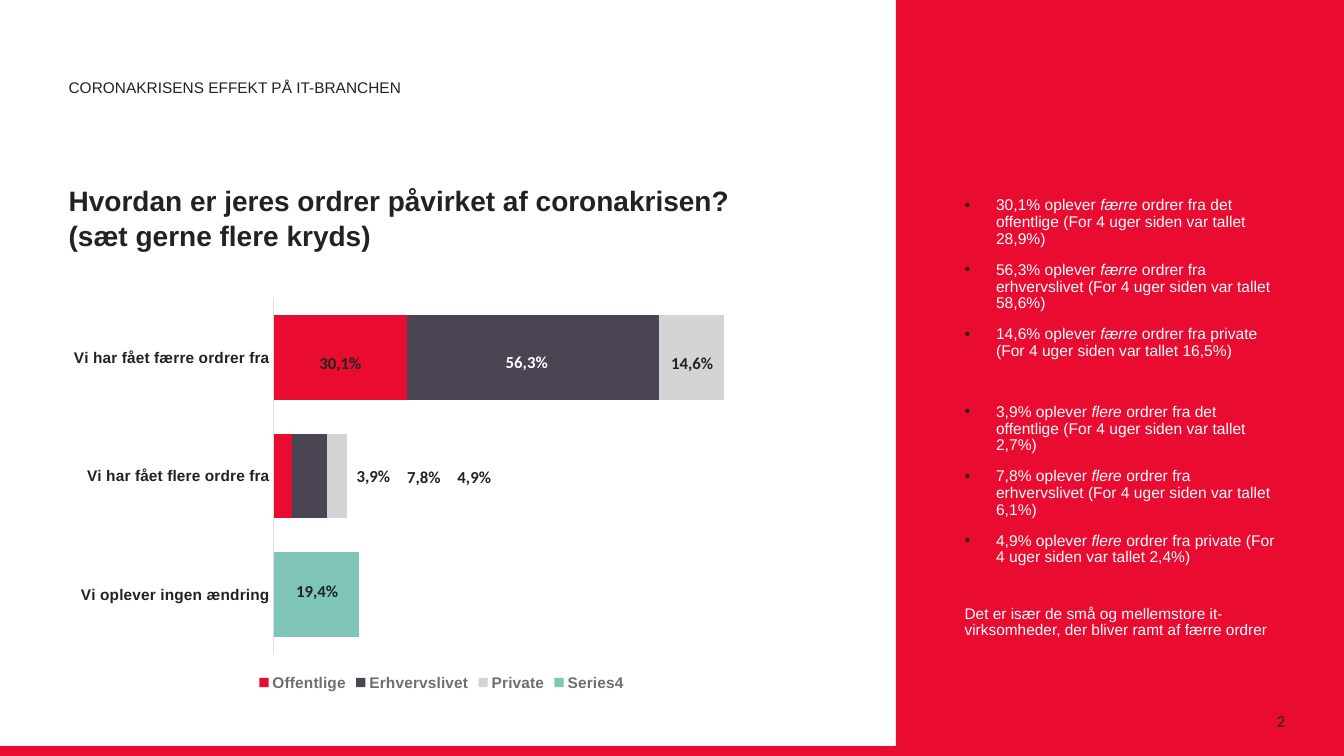
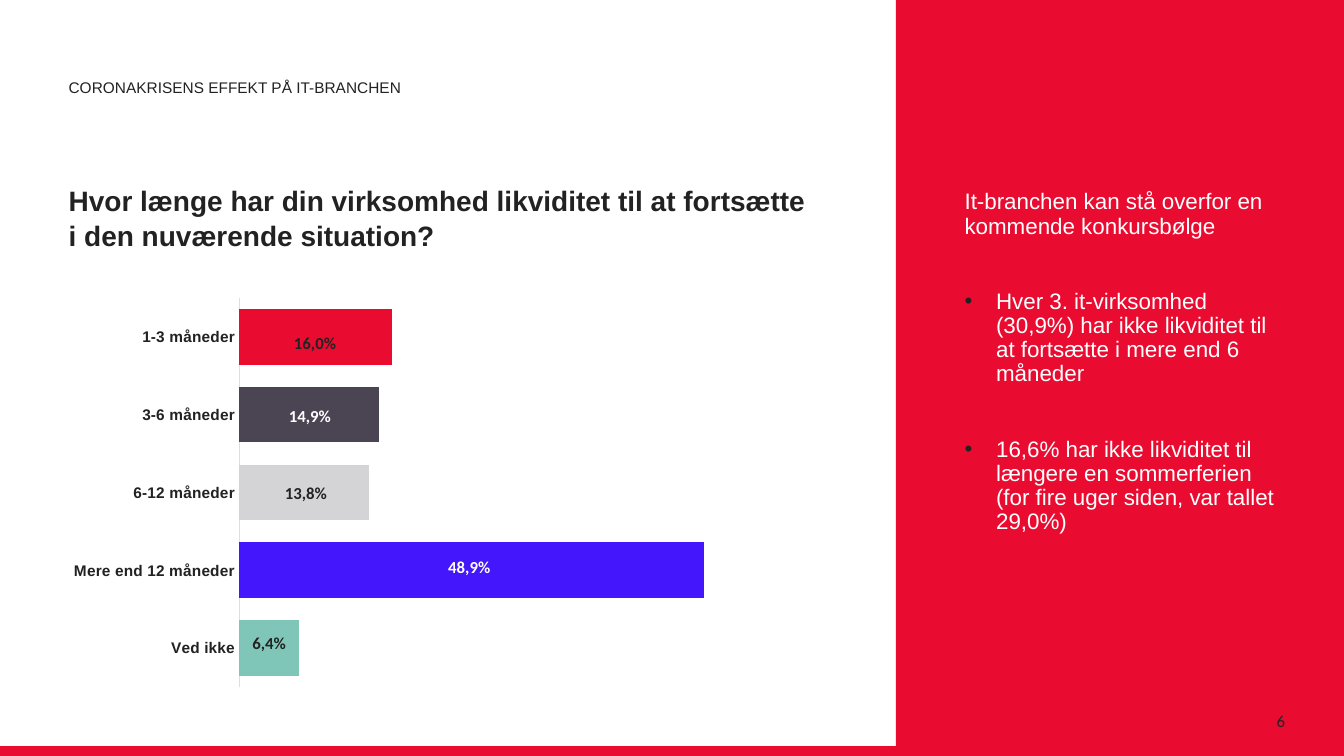
from dataclasses import dataclass

from pptx import Presentation
from pptx import util as u
from pptx.chart.data import CategoryChartData
from pptx.dml.color import RGBColor
from pptx.enum import chart as charts
from pptx.enum import shapes, text
from pptx.oxml import ns, parse_xml


@dataclass(frozen=True)
class Theme:
    red: str = "E90C30"
    plum: str = "4A4453"
    silver: str = "D4D3D6"
    mint: str = "80C6B8"
    violet: str = "4316FB"
    ink: str = "222222"
    white: str = "FFFFFF"
    legend: str = "6F6F6F"
    axis: str = "DEDEDE"
    heading_font: str = "Arial"
    figure_font: str = "Calibri"
    title_size: float = 20
    lead_size: float = 16
    label_size: float = 12
    list_size: float = 11.1
    small_size: float = 11
    chart_size: float = 10


THEME = Theme()


@dataclass(frozen=True)
class Box:
    """A rectangle in points."""
    left: float
    top: float
    width: float
    height: float


@dataclass(frozen=True)
class Line:
    """A paragraph; words between asterisks are italic."""
    content: str
    before: float = 10
    bullet: bool = True


@dataclass(frozen=True)
class Series:
    name: str
    values: tuple[int | None, ...]
    color: str
    point_colors: tuple[str, ...] = ()


@dataclass(frozen=True)
class Label:
    content: str
    left: float
    top: float
    color: str = THEME.ink


@dataclass(frozen=True)
class Survey:
    number: int
    question: str
    categories: tuple[str, ...]
    series: tuple[Series, ...]
    plot: Box
    maximum: float
    labels: tuple[Label, ...]
    label_align: text.PP_ALIGN
    findings: tuple[Line, ...]
    findings_top: float
    findings_size: float
    note: str = ""


WIDTH, HEIGHT = 960, 540
PANEL = Box(640, 0, 320, HEIGHT)
BOTTOM_BAND = Box(0, 533, WIDTH, 7)
KICKER = Box(41.8, 51.1, 547.2, 21.6)
TITLE = Box(41.8, 103.7, 547.2, 79.9)
CHART = Box(41.8, 206.6, 547.2, 290.2)
NOTE = Box(681.8, 429.1, 236.2, 90.7)
PAGE_NUMBER = Box(702, 500.4, 216, 28.8)
BULLET_INDENT = 22.5

SURVEYS = (
    Survey(
        2,
        "Hvordan er jeres ordrer påvirket af coronakrisen?\n(sæt gerne flere kryds)",
        ("Vi oplever ingen ændring", "Vi har fået flere ordre fra", "Vi har fået færre ordrer fra"),
        (
            Series("Offentlige", (None, 7, 53), THEME.red),
            Series("Erhvervslivet", (None, 14, 100), THEME.plum),
            Series("Private", (None, 8, 26), THEME.silver),
            Series("Series4", (34, None, None), THEME.mint),
        ),
        Box(195.7, 212.9, 359.5, 254.3), 200,
        (
            Label("30,1%", 221, 248.4),
            Label("56,3%", 354.2, 247.7, THEME.white),
            Label("14,6%", 472.3, 248.4),
            Label("3,9%", 247.7, 329),
            Label("7,8%", 283.7, 329.8),
            Label("4,9%", 319.7, 329.8),
            Label("19,4%", 204.5, 411.1),
        ),
        text.PP_ALIGN.LEFT,
        (
            Line("30,1% oplever *færre* ordrer fra det offentlige (For 4 uger siden var tallet 28,9%)", 0),
            Line("56,3% oplever *færre* ordrer fra erhvervslivet (For 4 uger siden var tallet 58,6%)"),
            Line("14,6% oplever *færre* ordrer fra private (For 4 uger siden var tallet 16,5%)"),
            Line("3,9% oplever *flere* ordrer fra det offentlige (For 4 uger siden var tallet 2,7%)", 31.5),
            Line("7,8% oplever *flere* ordrer fra erhvervslivet (For 4 uger siden var tallet 6,1%)"),
            Line("4,9% oplever *flere* ordrer fra private (For 4 uger siden var tallet 2,4%)"),
        ),
        137.5, THEME.list_size,
        "Det er især de små og mellemstore it-virksomheder, der bliver ramt af færre ordrer",
    ),
    Survey(
        6,
        "Hvor længe har din virksomhed likviditet til at fortsætte i den nuværende situation?",
        ("Ved ikke", "Mere end 12 måneder", "6-12 måneder", "3-6 måneder", "1-3 måneder"),
        (
            Series("Series 1", (13, 100, 28, 30, 33), THEME.red,
                   (THEME.mint, THEME.violet, THEME.silver, THEME.plum, THEME.red)),
        ),
        Box(170.7, 212.9, 398.6, 277.9), 120,
        (
            Label("14,9%", 198.7, 286.6, THEME.white),
            Label("16,0%", 202.3, 234),
            Label("13,8%", 195.8, 341.3),
            Label("48,9%", 312.5, 393.8, THEME.white),
            Label("6,4%", 172.8, 448.6),
        ),
        text.PP_ALIGN.CENTER,
        (
            Line("It-branchen kan stå overfor en kommende konkursbølge", 0, False),
            Line("Hver 3. it-virksomhed (30,9%) har ikke likviditet til at fortsætte i mere end 6 måneder", 36.6),
            Line("16,6% har ikke likviditet til længere en sommerferien "
                 "(for fire uger siden, var tallet 29,0%)", 36.6),
        ),
        132.5, THEME.lead_size,
    ),
)


def in_points(box: Box) -> tuple:
    return u.Pt(box.left), u.Pt(box.top), u.Pt(box.width), u.Pt(box.height)


def place(shape, box: Box) -> None:
    shape.left, shape.top, shape.width, shape.height = in_points(box)


def paint(fill, color: str) -> None:
    fill.solid()
    fill.fore_color.rgb = RGBColor.from_string(color)


def style(font, size: float, color: str, name: str = THEME.heading_font,
          bold: bool = False, italic: bool = False) -> None:
    font.name, font.size, font.bold, font.italic = name, u.Pt(size), bold, italic
    font.color.rgb = RGBColor.from_string(color)


def set_bullet(paragraph, bullet: bool) -> None:
    properties = paragraph._p.get_or_add_pPr()
    indent = u.Pt(BULLET_INDENT) if bullet else 0
    properties.set("marL", str(indent))
    properties.set("indent", str(-indent))
    marks = (f'<a:buClr {{}}><a:srgbClr val="{THEME.ink}"/></a:buClr>',
             '<a:buFont {} typeface="Arial"/>', '<a:buChar {} char="•"/>')
    for mark in marks if bullet else ("<a:buNone {}/>",):
        properties.append(parse_xml(mark.format(ns.nsdecls("a"))))


def write(shape, lines: str | tuple[Line, ...], *, size: float, color: str = THEME.ink,
          name: str = THEME.heading_font, bold: bool = False, align=text.PP_ALIGN.LEFT,
          anchor=text.MSO_ANCHOR.TOP, spacing: float | None = None, wrap: bool = True) -> None:
    frame = shape.text_frame
    frame.word_wrap = wrap
    frame.auto_size = text.MSO_AUTO_SIZE.NONE if wrap else text.MSO_AUTO_SIZE.SHAPE_TO_FIT_TEXT
    frame.vertical_anchor = anchor
    if isinstance(lines, str):
        lines = (Line(lines, 0, False),)
    for index, line in enumerate(lines):
        paragraph = frame.add_paragraph() if index else frame.paragraphs[0]
        set_bullet(paragraph, line.bullet)
        paragraph.alignment = align
        paragraph.space_before = u.Pt(line.before)
        if spacing:
            paragraph.line_spacing = spacing
        for part_index, part in enumerate(line.content.split("*")):
            for row_index, row in enumerate(part.split("\n")):
                if row_index:
                    paragraph.add_line_break()
                run = paragraph.add_run()
                run.text = row
                style(run.font, size, color, name, bold, italic=part_index % 2 == 1)


def add_bands(layout, slide) -> None:
    """Put the red areas on the layout, behind its placeholders."""
    for box in (PANEL, BOTTOM_BAND):
        band = slide.shapes.add_shape(shapes.MSO_SHAPE.RECTANGLE, *in_points(box))
        band.shadow.inherit = False
        paint(band.fill, THEME.red)
        band.line.fill.background()
        layout.shapes.element.insert(2, band.element)


def fix_plot_area(chart, plot: Box) -> None:
    """Pin the inner plot area to a rectangle on the slide."""
    area = chart.element.find(".//" + ns.qn("c:plotArea"))
    for layout in area.findall(ns.qn("c:layout")):
        area.remove(layout)
    fractions = {
        "x": (plot.left - CHART.left) / CHART.width,
        "y": (plot.top - CHART.top) / CHART.height,
        "w": plot.width / CHART.width,
        "h": plot.height / CHART.height,
    }
    sizes = "".join(f'<c:{key} val="{value:.4f}"/>' for key, value in fractions.items())
    area.insert(0, parse_xml(
        f'<c:layout {ns.nsdecls("c")}><c:manualLayout><c:layoutTarget val="inner"/>'
        f'<c:xMode val="edge"/><c:yMode val="edge"/>{sizes}</c:manualLayout></c:layout>'))


def add_bar_chart(slide, survey: Survey) -> None:
    stacked = len(survey.series) > 1
    data = CategoryChartData()
    data.categories = survey.categories
    for series in survey.series:
        data.add_series(series.name, series.values)
    kind = charts.XL_CHART_TYPE.BAR_STACKED if stacked else charts.XL_CHART_TYPE.BAR_CLUSTERED
    chart = slide.shapes.add_chart(kind, *in_points(CHART), data).chart
    style(chart.font, THEME.chart_size, THEME.ink, THEME.figure_font)
    chart.has_title = False
    chart.has_legend = stacked
    if stacked:
        chart.legend.position = charts.XL_LEGEND_POSITION.BOTTOM
        chart.legend.include_in_layout = False
        style(chart.legend.font, THEME.small_size, THEME.legend, bold=True)

    plot = chart.plots[0]
    plot.gap_width = 40
    plot.vary_by_categories = False
    if stacked:
        plot.overlap = 100
    for drawn, series in zip(plot.series, survey.series):
        drawn.invert_if_negative = False
        paint(drawn.format.fill, series.color)
        for index, color in enumerate(series.point_colors):
            paint(drawn.points[index].format.fill, color)

    categories, values = chart.category_axis, chart.value_axis
    categories.major_tick_mark = charts.XL_TICK_MARK.NONE
    categories.format.line.width = u.Pt(0.75)
    paint(categories.format.line.fill, THEME.axis)
    style(categories.tick_labels.font, THEME.small_size, THEME.ink, bold=True)
    values.minimum_scale, values.maximum_scale = 0, survey.maximum
    values.has_major_gridlines = False
    values.visible = False
    fix_plot_area(chart, survey.plot)


def add_survey(slide, survey: Survey) -> None:
    title, kicker, findings, note, spare = slide.placeholders
    for shape, box in ((title, TITLE), (kicker, KICKER), (note, NOTE),
                       (findings, Box(NOTE.left, survey.findings_top, NOTE.width, 278.6))):
        place(shape, box)
    write(title, survey.question, size=THEME.title_size, bold=True,
          anchor=text.MSO_ANCHOR.BOTTOM, spacing=1.05)
    write(kicker, "CORONAKRISENS EFFEKT PÅ IT-BRANCHEN", size=THEME.small_size,
          anchor=text.MSO_ANCHOR.BOTTOM, spacing=0.9)
    write(findings, survey.findings, size=survey.findings_size, color=THEME.white, spacing=0.9)
    if survey.note:
        write(note, survey.note, size=THEME.small_size, color=THEME.white, spacing=0.9)
    for empty in (spare,) if survey.note else (spare, note):
        slide.shapes.element.remove(empty.element)

    add_bar_chart(slide, survey)
    for label in survey.labels:
        box = Box(label.left, label.top, 45.4 if len(label.content) == 5 else 38.9, 21.6)
        write(slide.shapes.add_textbox(*in_points(box)), label.content, size=THEME.label_size,
              color=label.color, name=THEME.figure_font, bold=True,
              align=survey.label_align, wrap=False)
    number = slide.shapes.add_textbox(*in_points(PAGE_NUMBER))
    number.text_frame.margin_right = 0
    write(number, str(survey.number), size=THEME.label_size, name=THEME.figure_font,
          align=text.PP_ALIGN.RIGHT, anchor=text.MSO_ANCHOR.MIDDLE)


def main() -> None:
    presentation = Presentation()
    presentation.slide_width, presentation.slide_height = u.Pt(WIDTH), u.Pt(HEIGHT)
    layout = presentation.slide_layouts.get_by_name("Comparison")
    slides = [presentation.slides.add_slide(layout) for _ in SURVEYS]
    add_bands(layout, slides[0])
    for slide, survey in zip(slides, SURVEYS):
        add_survey(slide, survey)
    presentation.save("out.pptx")


if __name__ == "__main__":
    main()
